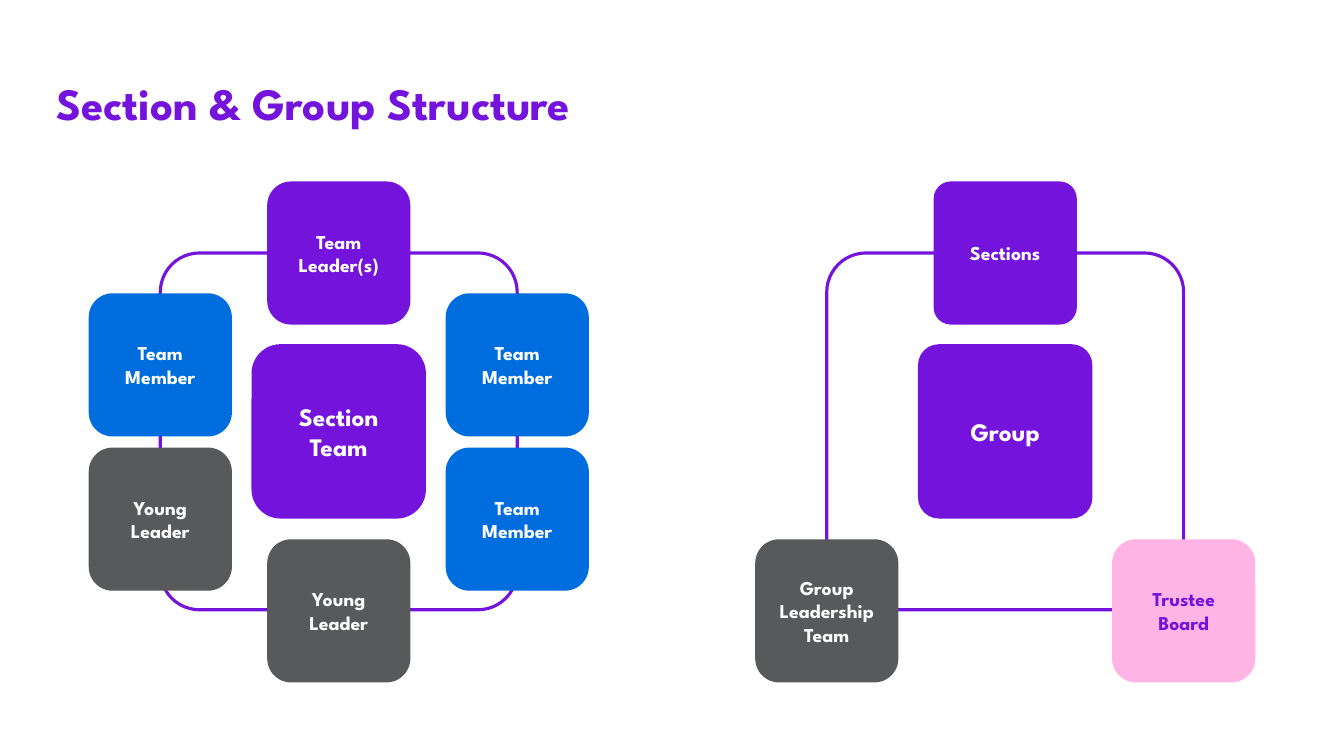
import pptx
import pptx.util
import pptx.dml.color
import pptx.enum.shapes
import pptx.enum.text

FONT = "League Spartan"
PURPLE, BLUE, GREY, PINK, WHITE = "7413DC", "006DDF", "58595B", "FFB4E5", "FFFFFF"
PITCH = 1.77
SECTION_LEFT, GROUP_LEFT = 1.59, 8.2
ROWS = {"top": 2.51, "upper": 3.62, "middle": 4.28, "lower": 5.15, "bottom": 6.06}
TILE, HUB = 1.42, 1.73
ROUND, TIGHT = 0.167, 0.12


def rgb(color):
    """Turn a hex string into a colour."""
    return pptx.dml.color.RGBColor.from_string(color)


def add_run(p, text, size, color):
    """Add one bold run to a paragraph."""
    r = p.add_run()
    r.text = text
    r.font.name = FONT
    r.font.size = pptx.util.Pt(size)
    r.font.bold = True
    r.font.color.rgb = rgb(color)


def add_rounded(s, x, y, size, corner):
    """Add a rounded square centred on x, y."""
    sp = s.shapes.add_shape(
        pptx.enum.shapes.MSO_SHAPE.ROUNDED_RECTANGLE,
        pptx.util.Inches(x - size / 2), pptx.util.Inches(y - size / 2),
        pptx.util.Inches(size), pptx.util.Inches(size))
    sp.adjustments[0] = corner
    sp.shadow.inherit = False
    return sp


def add_ring(s, left):
    """Add the outline that joins the tiles of one diagram."""
    sp = add_rounded(s, left + PITCH, ROWS["middle"], 2 * PITCH, 0.11)
    sp.fill.background()
    sp.line.color.rgb = rgb(PURPLE)
    sp.line.width = pptx.util.Pt(2.25)


def add_tile(s, left, col, row, text, fill, color=WHITE, size=TILE, pt=14, corner=ROUND):
    """Add a filled tile with centred text at a grid column and row."""
    sp = add_rounded(s, left + col * PITCH, ROWS[row], size, corner)
    sp.fill.solid()
    sp.fill.fore_color.rgb = rgb(fill)
    sp.line.fill.background()
    tf = sp.text_frame
    tf.word_wrap = True
    tf.vertical_anchor = pptx.enum.text.MSO_ANCHOR.MIDDLE
    p = tf.paragraphs[0]
    p.alignment = pptx.enum.text.PP_ALIGN.CENTER
    add_run(p, text, pt, color)


def add_title(s, text):
    """Add the slide title."""
    sp = s.shapes.add_textbox(*map(pptx.util.Inches, (0.46, 0.7, 7.97, 0.64)))
    tf = sp.text_frame
    tf.word_wrap = True
    add_run(tf.paragraphs[0], text, 32, PURPLE)


def add_group(s):
    """Draw the group diagram."""
    add_ring(s, GROUP_LEFT)
    add_tile(s, GROUP_LEFT, 1, "top", "Sections", PURPLE, corner=TIGHT)
    add_tile(s, GROUP_LEFT, 1, "middle", "Group", PURPLE, size=HUB, pt=18, corner=TIGHT)
    add_tile(s, GROUP_LEFT, 2, "bottom", "Trustee Board", PINK, PURPLE)
    add_tile(s, GROUP_LEFT, 0, "bottom", "Group Leadership Team", GREY)


def add_section(s):
    """Draw the section team diagram."""
    add_ring(s, SECTION_LEFT)
    add_tile(s, SECTION_LEFT, 1, "middle", "Section Team", PURPLE, size=HUB, pt=18)
    for col, row, text, fill in (
        (1, "top", "Team Leader(s)", PURPLE),
        (0, "upper", "Team Member", BLUE),
        (2, "upper", "Team Member", BLUE),
        (2, "lower", "Team Member", BLUE),
        (0, "lower", "Young Leader", GREY),
        (1, "bottom", "Young Leader", GREY),
    ):
        add_tile(s, SECTION_LEFT, col, row, text, fill)


def main():
    """Build and save the slide."""
    prs = pptx.Presentation()
    prs.slide_width = pptx.util.Inches(13.33)
    prs.slide_height = pptx.util.Inches(7.5)
    s = prs.slides.add_slide(prs.slide_layouts[6])
    add_group(s)
    add_section(s)
    add_title(s, "Section & Group Structure")
    prs.save("out.pptx")


if __name__ == "__main__":
    main()
